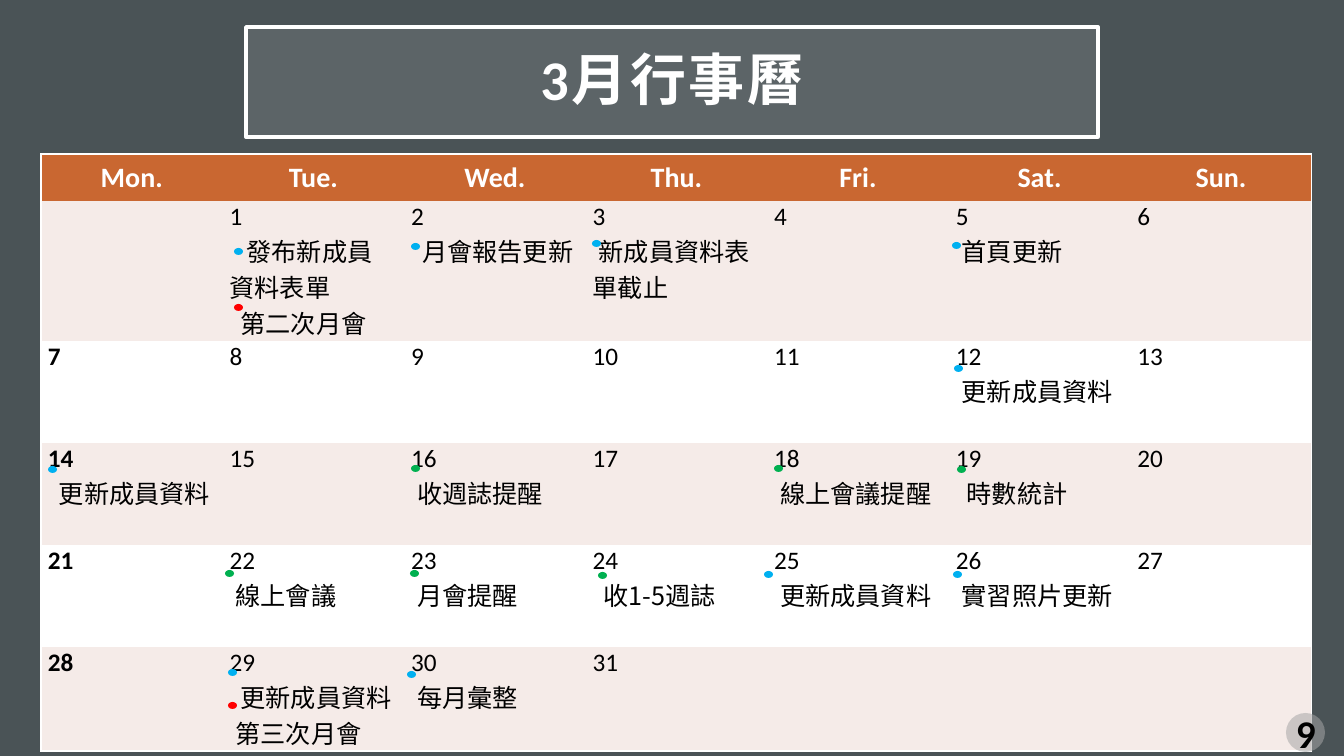
import pptx
import pptx.util
import pptx.dml.color
import pptx.enum.shapes
import pptx.enum.text
import pptx.oxml
import pptx.oxml.ns

RGB = pptx.dml.color.RGBColor
SLATE = RGB(0x4A, 0x53, 0x56)
WHITE = RGB(0xFF, 0xFF, 0xFF)
BLACK = RGB(0, 0, 0)
RUST = RGB(0xC9, 0x67, 0x31)
BLUSH = RGB(0xF5, 0xEB, 0xE8)
BLUE = RGB(0x00, 0xB0, 0xF0)
GREEN = RGB(0x00, 0xB0, 0x50)
RED = RGB(0xFF, 0, 0)
GREY = RGB(0xA6, 0xA6, 0xA6)
LATIN, HAN = "Calibri", "Noto Sans CJK SC"

# Content
TITLE = "3月行事曆"
PAGE = "9"
DAYS = ["Mon.", "Tue.", "Wed.", "Thu.", "Fri.", "Sat.", "Sun."]
LAST = 31
# day: (first-line indent in px, text, font)
EVENTS = {
    1: [(17, "發布新成員資料表單", LATIN), (11, "第二次月會", HAN)],
    2: [(11, "月會報告更新", LATIN)],
    3: [(6, "新成員資料表單截止", LATIN)],
    5: [(6, "首頁更新", LATIN)],
    12: [(6, "更新成員資料", LATIN)],
    14: [(11, "更新成員資料", LATIN)],
    16: [(6, "收週誌提醒", HAN)],
    18: [(6, "線上會議提醒", HAN)],
    19: [(11, "時數統計", LATIN)],
    22: [(6, "線上會議", LATIN)],
    23: [(6, "月會提醒", HAN)],
    24: [(11, "收1-5週誌", HAN)],
    25: [(6, "更新成員資料", LATIN)],
    26: [(6, "實習照片更新", LATIN)],
    29: [(11, "更新成員資料", LATIN), (6, "第三次月會", HAN)],
    30: [(6, "每月彙整", LATIN)],
}
# Left and top of each dot, in px
DOTS = {
    BLUE: [(234, 248), (411, 243), (592, 240), (952, 242), (954, 365), (48, 466),
           (953, 571), (764, 571), (228, 669), (407, 671)],
    GREEN: [(411, 465), (774, 465), (957, 466), (225, 570), (410, 570), (598, 572)],
    RED: [(234, 304), (228, 702)],
}
ROWS = [47, 113, 102, 102, 102, 102]


def px(n):
    return pptx.util.Emu(round(n * 914400 / 100.8))


def box(*lengths):
    return [px(n) for n in lengths]


def paint(shape, color, alpha=None):
    shape.fill.solid()
    shape.fill.fore_color.rgb = color
    if alpha:
        tint = shape.fill._xPr.find(".//" + pptx.oxml.ns.qn("a:srgbClr"))
        tint.append(pptx.oxml.parse_xml(
            f'<a:alpha {pptx.oxml.ns.nsdecls("a")} val="{alpha * 1000}"/>'))


def style(para, size, color, bold=False, face=LATIN):
    font = para.font
    font.size, font.bold, font.name = pptx.util.Pt(size), bold, face
    font.color.rgb = color


def edge(cell, sides):
    """White rule on the given sides, none on the others."""
    props = cell._tc.get_or_add_tcPr()
    for side in "LRTB":
        fill = '<a:solidFill><a:srgbClr val="FFFFFF"/></a:solidFill>' if side in sides else "<a:noFill/>"
        props.append(pptx.oxml.parse_xml(
            f'<a:ln{side} {pptx.oxml.ns.nsdecls("a")} w="12700">{fill}</a:ln{side}>'))


def oval(color, *place, alpha=None):
    dot = slide.shapes.add_shape(pptx.enum.shapes.MSO_SHAPE.OVAL, *box(*place))
    dot.shadow.inherit = False
    paint(dot, color, alpha)
    dot.line.fill.background()


deck = pptx.Presentation()
deck.slide_width, deck.slide_height = box(1344, 756)
slide = deck.slides.add_slide(deck.slide_layouts[5])
paint(slide.background, SLATE)
CENTER = pptx.enum.text.PP_ALIGN.CENTER
MIDDLE = pptx.enum.text.MSO_ANCHOR.MIDDLE

# Title
title = slide.shapes.title
title.left, title.top, title.width, title.height = box(246, 27, 852, 110)
paint(title, WHITE, 10)
title.line.color.rgb = WHITE
title.line.width = pptx.util.Pt(2.5)
frame = title.text_frame
frame.text = TITLE
frame.word_wrap = True
frame.vertical_anchor = MIDDLE
frame.margin_left = frame.margin_right = frame.margin_top = frame.margin_bottom = px(20)
para = frame.paragraphs[0]
para.alignment, para.line_spacing = CENTER, 0.9
style(para, 40, WHITE, True)
para.runs[0]._r.get_or_add_rPr().set("spc", "200")

# Calendar
table = slide.shapes.add_table(len(ROWS), len(DAYS), *box(41, 154, 1271, sum(ROWS))).table
for row, tall in zip(table.rows, ROWS):
    row.height = px(tall)
for col in table.columns:
    col.width = px(1271 / len(DAYS))

for r in range(len(ROWS)):
    for c, name in enumerate(DAYS):
        cell = table.cell(r, c)
        cell.margin_left = cell.margin_right = px(7)
        cell.margin_top = cell.margin_bottom = 0
        edge(cell, ("L" if c == 0 else "") + ("R" if c == len(DAYS) - 1 else "")
             + ("T" if r == 0 else "") + ("B" if r == len(ROWS) - 1 else ""))
        paint(cell, RUST if r == 0 else BLUSH if r % 2 else WHITE)
        para = cell.text_frame.paragraphs[0]
        if r == 0:
            cell.vertical_anchor = MIDDLE
            para.text = name
            para.alignment = CENTER
            style(para, 20, WHITE, True)
            continue
        day = (r - 1) * len(DAYS) + c
        if not 1 <= day <= LAST:
            continue
        para.text = str(day)
        style(para, 18, BLACK, c == 0)
        for indent, text, face in EVENTS.get(day, []):
            para = cell.text_frame.add_paragraph()
            para.text = text
            style(para, 18, BLACK, False, face)
            props = para._p.get_or_add_pPr()
            props.set("marL", "0")
            props.set("indent", str(px(indent)))

# Event dots
for color, spots in DOTS.items():
    for left, top in spots:
        oval(color, left, top, 9, 7)

# Page number
oval(GREY, 1286, 713, 39, 39, alpha=54)
frame = slide.shapes.add_textbox(*box(1286, 704, 69, 57)).text_frame
frame.word_wrap = True
frame.text = PAGE
style(frame.paragraphs[0], 28, BLACK, True)

deck.save("out.pptx")
